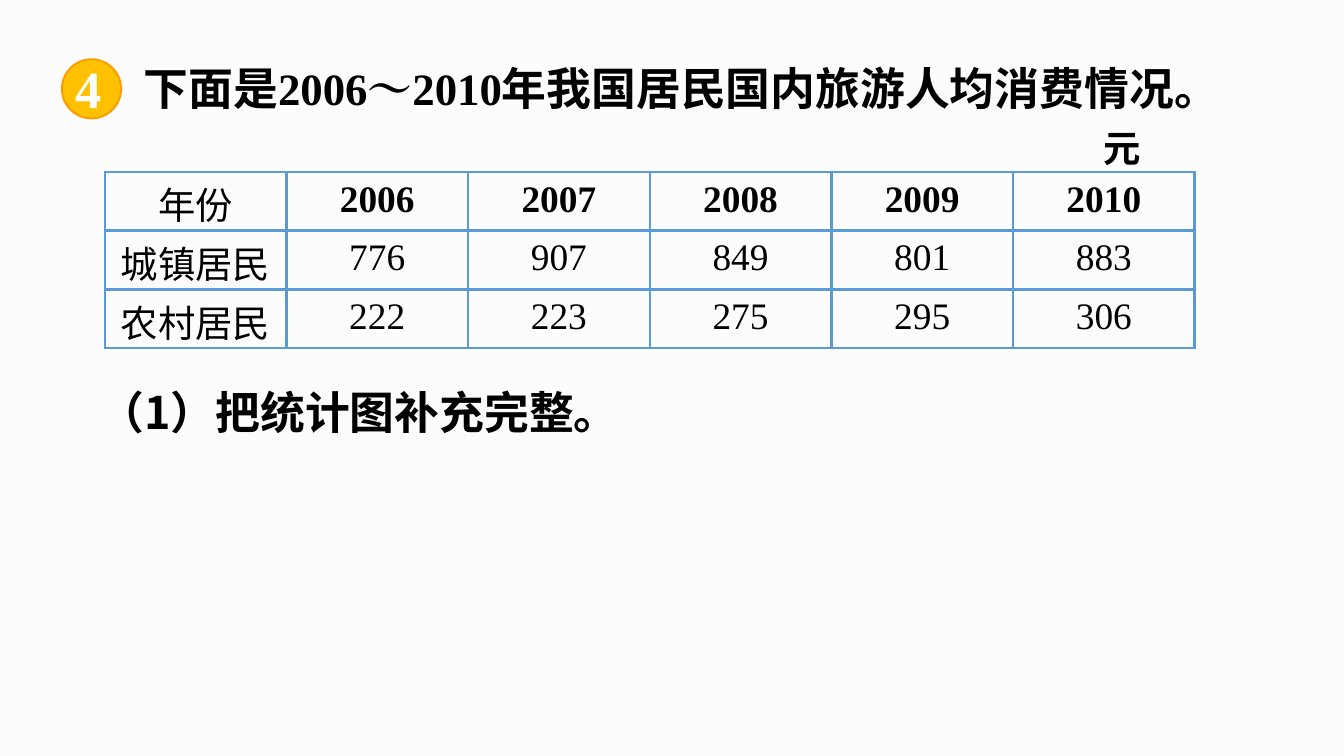
from pptx import Presentation
from pptx.dml.color import RGBColor
from pptx.enum import shapes, text
from pptx.oxml import parse_xml
from pptx.oxml.ns import nsdecls, qn
from pptx.util import Cm, Pt

CJK, LATIN = "Noto Sans CJK SC", "Times New Roman"
BLACK = RGBColor(0, 0, 0)
WHITE = RGBColor(0xFF, 0xFF, 0xFF)
PAPER = RGBColor(0xFC, 0xFC, 0xFC)
AMBER = RGBColor(0xFF, 0xC0, 0x00)
ORANGE = RGBColor(0xFF, 0x99, 0x00)
GRID_BLUE = RGBColor(0x5B, 0x9B, 0xD5)

HEADING = [
    ("下面是", CJK),
    ("2006～2010", LATIN),
    ("年我国居民国内旅游人均消费情况。", CJK),
]
QUESTION = "（1）把统计图补充完整。"
NUMBER = "4"
UNIT = "元"
SPENDING = [
    ("年份", 2006, 2007, 2008, 2009, 2010),
    ("城镇居民", 776, 907, 849, 801, 883),
    ("农村居民", 222, 223, 275, 295, 306),
]
TABLE_LEFT, TABLE_TOP, TABLE_WIDTH = 1.98, 3.25, 20.6
ROW_HEIGHT = 1.11


def set_typeface(font, name):
    """Use one typeface for both Latin and East Asian characters."""
    font.name = name
    latin = font._element.find(qn("a:latin")) if hasattr(font, "_element") else font._rPr.find(qn("a:latin"))
    latin.addnext(parse_xml(f'<a:ea {nsdecls("a")} typeface="{name}"/>'))


def style(paragraph, size, bold=True, color=BLACK, name=None, align=text.PP_ALIGN.LEFT):
    paragraph.alignment = align
    font = paragraph.font
    font.size, font.bold = Pt(size), bold
    font.color.rgb = color
    if name:
        set_typeface(font, name)


def add_label(slide, words, box, size, wrap=True, **look):
    frame = slide.shapes.add_textbox(*map(Cm, box)).text_frame
    frame.word_wrap = wrap
    paragraph = frame.paragraphs[0]
    paragraph.text = words
    style(paragraph, size, **look)


def add_heading(slide):
    title = slide.shapes.title
    title.left, title.top, title.width, title.height = map(Cm, (2.46, 1.02, 20.37, 1.27))
    frame = title.text_frame
    frame.word_wrap = True
    frame.auto_size = text.MSO_AUTO_SIZE.NONE
    frame.vertical_anchor = text.MSO_ANCHOR.TOP
    paragraph = frame.paragraphs[0]
    style(paragraph, 24)
    for words, name in HEADING:
        run = paragraph.add_run()
        run.text = words
        set_typeface(run.font, name)


def add_number_badge(slide):
    disc = slide.shapes.add_shape(shapes.MSO_SHAPE.OVAL, Cm(1.17), Cm(1.12), Cm(1.12), Cm(1.12))
    disc.shadow.inherit = False
    disc.fill.solid()
    disc.fill.fore_color.rgb = AMBER
    disc.line.color.rgb = ORANGE
    disc.line.width = Pt(1)
    add_label(slide, NUMBER, (1.17, 0.94, 0.99, 1.45), 28, wrap=False,
              color=WHITE, name=LATIN, align=text.PP_ALIGN.CENTER)


def set_borders(cell):
    properties = cell._tc.get_or_add_tcPr()
    for position, side in enumerate(("lnL", "lnR", "lnT", "lnB")):
        properties.insert(position, parse_xml(
            f'<a:{side} {nsdecls("a")} w="{Pt(1.5)}"><a:solidFill>'
            f'<a:srgbClr val="{GRID_BLUE}"/></a:solidFill></a:{side}>'))


def add_spending_table(slide):
    rows, columns = len(SPENDING), len(SPENDING[0])
    table = slide.shapes.add_table(
        rows, columns, Cm(TABLE_LEFT), Cm(TABLE_TOP),
        Cm(TABLE_WIDTH), Cm(ROW_HEIGHT * rows)).table
    table.first_row = table.horz_banding = False
    for r, record in enumerate(SPENDING):
        for c, value in enumerate(record):
            cell = table.cell(r, c)
            is_label = c == 0
            cell.margin_top = Cm(0.08 if is_label else 0.13)
            cell.margin_bottom = 0
            cell.fill.background()
            set_borders(cell)
            paragraph = cell.text_frame.paragraphs[0]
            paragraph.text = str(value)
            style(paragraph, 20, bold=r == 0 and not is_label,
                  name=CJK if is_label else LATIN, align=text.PP_ALIGN.CENTER)


def main():
    deck = Presentation()
    deck.slide_width, deck.slide_height = Cm(25.4), Cm(14.29)
    slide = deck.slides.add_slide(deck.slide_layouts[5])
    slide.background.fill.solid()
    slide.background.fill.fore_color.rgb = PAPER
    add_heading(slide)
    add_label(slide, QUESTION, (1.63, 7.14, 14.6, 1.27), 24, name=CJK)
    add_number_badge(slide)
    add_label(slide, UNIT, (20.6, 2.24, 1.47, 1.12), 20, name=CJK)
    add_spending_table(slide)
    deck.save("out.pptx")


if __name__ == "__main__":
    main()
